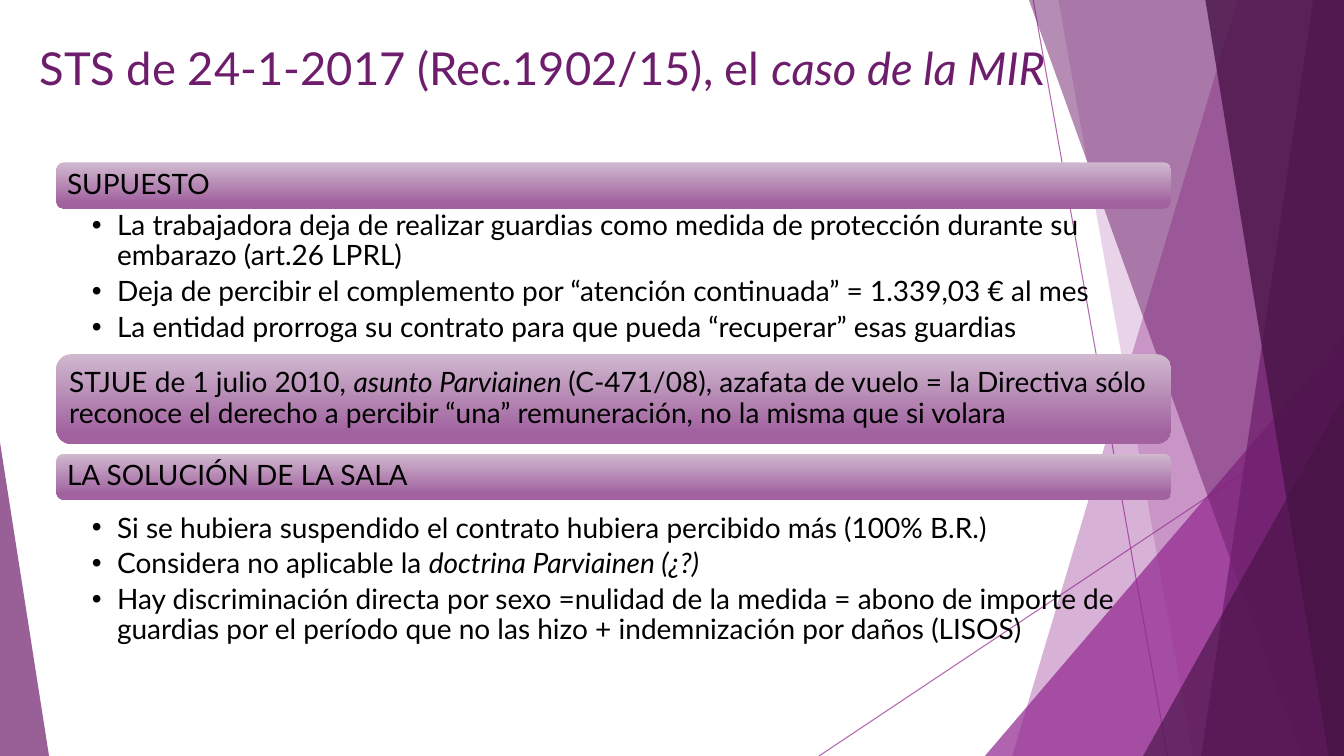
from lxml import etree
from pptx import Presentation
from pptx.dml.color import RGBColor
from pptx.enum import shapes, text
from pptx.oxml import ns
from pptx.util import Pt

COLORS = {"bright": "92278F", "purple": "6D1D6B", "dark": "491447",
          "pale": "D0B9CF", "mauve": "A1629F", "black": "000000"}
WIDTH, HEIGHT = 960, 540
LEFT, BAND_WIDTH = 40.3, 796.3


class SlideBuilder:
    """Hold the style and the current slide, and draw each kind of element."""

    font = "Lato"
    text_size = 20
    title_size = 32.4

    def __init__(self, slide):
        self.slide = slide
        self.shapes = slide.shapes

    def color(self, name):
        return RGBColor.from_string(COLORS[name])

    def set_alpha(self, fill, name, percent):
        fill.solid()
        fill.fore_color.rgb = self.color(name)
        color = fill._xPr.find(".//" + ns.qn("a:srgbClr"))
        etree.SubElement(color, ns.qn("a:alpha"), val=str(percent * 1000))

    def line(self, start, end):
        connector = self.shapes.add_connector(
            shapes.MSO_CONNECTOR.STRAIGHT, *map(Pt, start + end))
        connector.line.width = Pt(0.75)
        self.set_alpha(connector.line.fill, "bright", 70)
        etree.SubElement(connector._element.spPr, ns.qn("a:effectLst"))

    def finish_facet(self, shape, name, percent):
        shape.shadow.inherit = False
        shape.line.fill.background()
        self.set_alpha(shape.fill, name, percent)

    def facet(self, top_x, bottom_x, name, percent):
        builder = self.shapes.build_freeform(Pt(top_x), 0)
        corners = [(WIDTH, 0), (WIDTH, HEIGHT), (bottom_x, HEIGHT)]
        builder.add_line_segments([(Pt(x), Pt(y)) for x, y in corners])
        self.finish_facet(builder.convert_to_shape(), name, percent)

    def triangle(self, left, top, width, apex, name, percent):
        shape = self.shapes.add_shape(
            shapes.MSO_SHAPE.ISOSCELES_TRIANGLE,
            *map(Pt, (left, top, width, HEIGHT - top)))
        shape.adjustments[0] = apex
        self.finish_facet(shape, name, percent)

    def fill_paragraph(self, paragraph, content, size, name):
        """Add text in which asterisks enclose the italic parts."""
        for index, part in enumerate(content.split("*")):
            if part:
                run = paragraph.add_run()
                run.text = part
                if index % 2:
                    run.font.italic = True
        paragraph.alignment = text.PP_ALIGN.LEFT
        paragraph.font.name = self.font
        paragraph.font.size = Pt(size)
        paragraph.font.color.rgb = self.color(name)

    def set_frame(self, frame, margins, anchor):
        frame.word_wrap = True
        frame.auto_size = text.MSO_AUTO_SIZE.NONE
        frame.vertical_anchor = anchor
        (frame.margin_left, frame.margin_top,
         frame.margin_right, frame.margin_bottom) = map(Pt, margins)

    def place(self, index, box):
        shape = self.slide.placeholders[index]
        shape.left, shape.top, shape.width, shape.height = map(Pt, box)
        self.shapes._spTree.append(shape._element)
        return shape.text_frame

    def title(self, content, box):
        frame = self.place(0, box)
        self.set_frame(frame, (7.2, 3.6, 7.2, 3.6), text.MSO_ANCHOR.MIDDLE)
        self.fill_paragraph(frame.paragraphs[0], content, self.title_size,
                            "purple")

    def band(self, content, top, height):
        shape = self.shapes.add_shape(
            shapes.MSO_SHAPE.ROUNDED_RECTANGLE,
            *map(Pt, (LEFT, top, BAND_WIDTH, height)))
        shape.shadow.inherit = False
        shape.line.fill.background()
        shape.fill.gradient()
        shape.fill.gradient_angle = 270
        stops = zip(shape.fill.gradient_stops, ("pale", "mauve"), (0, 0.88))
        for stop, name, position in stops:
            stop.color.rgb = self.color(name)
            stop.position = position
        self.set_frame(shape.text_frame, (6, 6, 6, 6), text.MSO_ANCHOR.MIDDLE)
        paragraph = shape.text_frame.paragraphs[0]
        paragraph.line_spacing = 0.9
        self.fill_paragraph(paragraph, content, self.text_size, "black")

    def bullets(self, index, items, top, height):
        frame = self.place(index, (LEFT, top, BAND_WIDTH, height))
        self.set_frame(frame, (25.3, 2, 11.5, 2), text.MSO_ANCHOR.TOP)
        for number, item in enumerate(items):
            paragraph = frame.add_paragraph() if number else frame.paragraphs[0]
            paragraph.line_spacing = 0.9
            paragraph.space_before = Pt(0)
            paragraph.space_after = Pt(4)
            properties = paragraph._p.get_or_add_pPr()
            properties.set("marL", str(Pt(18)))
            properties.set("indent", str(-Pt(18)))
            self.fill_paragraph(paragraph, item, self.text_size, "black")


def main():
    presentation = Presentation()
    presentation.slide_width, presentation.slide_height = Pt(WIDTH), Pt(HEIGHT)
    slide = presentation.slides.add_slide(presentation.slide_layouts[3])
    builder = SlideBuilder(slide)

    builder.line((738, 0), (834, HEIGHT))
    builder.line((WIDTH, 290), (585, HEIGHT))
    builder.facet(884, 723, "bright", 36)
    builder.facet(756, 852, "bright", 20)
    builder.triangle(703.5, 240, 256.5, 1, "bright", 72)
    builder.facet(735, 929.5, "purple", 50)
    builder.facet(938, 858, "purple", 70)
    builder.facet(861, 949, "dark", 80)
    builder.triangle(816.5, 283, 143.5, 1, "dark", 66)
    builder.triangle(0, 316, 35, 0, "purple", 70)

    builder.title("STS de 24-1-2017 (Rec.1902/15), el *caso de la MIR*",
                  (21, 23, 769, 50.5))
    builder.band("SUPUESTO", 116, 33)
    builder.bullets(1, [
        "La trabajadora deja de realizar guardias como medida de protección "
        "durante su embarazo (art.26 LPRL)",
        "Deja de percibir el complemento por “atención continuada” = "
        "1.339,03 € al mes",
        "La entidad prorroga su contrato para que pueda “recuperar” esas "
        "guardias",
    ], 149, 104)
    builder.band(
        "STJUE de 1 julio 2010, *asunto Parviainen *(C-471/08), azafata de "
        "vuelo = la Directiva sólo reconoce el derecho a percibir “una” "
        "remuneración, no la misma que si volara", 253, 64)
    builder.band("LA SOLUCIÓN DE LA SALA", 324, 33)
    builder.bullets(2, [
        "Si se hubiera suspendido el contrato hubiera percibido más "
        "(100% B.R.)",
        "Considera no aplicable la *doctrina Parviainen (¿?)*",
        "Hay discriminación directa por sexo =nulidad de la medida = abono de "
        "importe de guardias por el período que no las hizo + indemnización "
        "por daños (LISOS)",
    ], 365, 99)

    for placeholder in list(slide.placeholders):
        if not placeholder.text_frame.text:
            slide.shapes._spTree.remove(placeholder._element)
    presentation.save("out.pptx")


if __name__ == "__main__":
    main()
